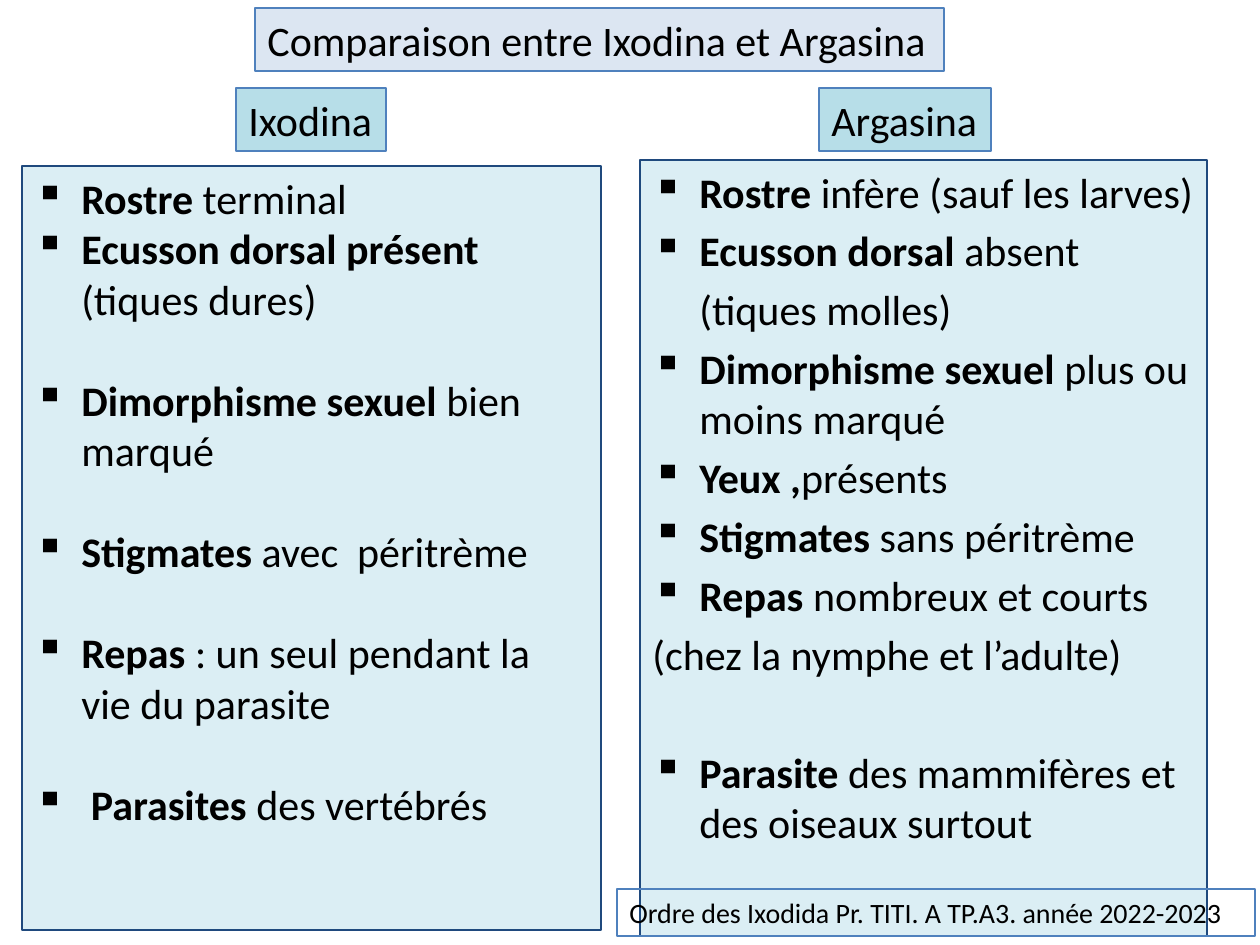
"""Build the slide comparing Ixodina and Argasina ticks."""
from lxml import etree
from pptx import Presentation
from pptx.dml.color import RGBColor
from pptx.enum.shapes import MSO_SHAPE
from pptx.enum.text import MSO_ANCHOR, MSO_AUTO_SIZE, PP_ALIGN
from pptx.oxml.ns import qn
from pptx.util import Emu, Pt

RECTANGLE = MSO_SHAPE.RECTANGLE
TOP = MSO_ANCHOR.TOP
LEFT = PP_ALIGN.LEFT
NO_AUTOSIZE = MSO_AUTO_SIZE.NONE

BLACK = RGBColor(0x00, 0x00, 0x00)
BLUE = RGBColor(0x4F, 0x81, 0xBD)
NAVY = RGBColor(0x1F, 0x49, 0x7D)
LAVENDER = RGBColor(0xDC, 0xE6, 0xF2)
AQUA = RGBColor(0xB7, 0xDE, 0xE8)
PALE_AQUA = RGBColor(0xDB, 0xEE, 0xF4)

FONT = "Calibri"
BODY_SIZE = 24
FOOTER_SIZE = 16
INDENT = 47
BULLET, INDENTED, FLUSH = "bullet", "indented", "flush"

LABELS = [
    ("Ixodina", (236, 88, 150, 63), AQUA, BODY_SIZE),
    ("Argasina", (819, 88, 172, 63), AQUA, BODY_SIZE),
    ("Comparaison entre Ixodina et Argasina", (255, 8, 689, 63), LAVENDER, BODY_SIZE),
]
FOOTER = ("Ordre des Ixodida Pr. TITI. A TP.A3. année 2022-2023",
          (617, 889, 638, 47), None, FOOTER_SIZE)

IXODINA = [
    (BULLET, 0, "Rostre ", "terminal"),
    (BULLET, 0, "Ecusson dorsal présent ", "(tiques dures)"),
    (BULLET, 29, "Dimorphisme sexuel", " bien marqué"),
    (BULLET, 29, "Stigmates", " avec  péritrème"),
    (BULLET, 29, "Repas ", ": un seul pendant la vie du parasite"),
    (BULLET, 29, " Parasites", " des vertébrés"),
]
ARGASINA = [
    (BULLET, 4.8, "Rostre", " infère (sauf les larves)"),
    (BULLET, 4.8, "Ecusson dorsal ", "absent"),
    (INDENTED, 4.8, "", "(tiques molles)"),
    (BULLET, 4.8, "Dimorphisme sexuel ", "plus ou moins marqué"),
    (BULLET, 4.8, "Yeux ,", "présents"),
    (BULLET, 4.8, "Stigmates ", "sans péritrème"),
    (BULLET, 4.8, "Repas", " nombreux et courts"),
    (FLUSH, 4.8, "", "(chez la nymphe et l’adulte)"),
    (BULLET, 38.6, "Parasite ", "des mammifères et des oiseaux surtout"),
]


def px(length):
    """Convert pixels to EMU."""
    return Emu(round(length * 914400 / 126))


def add_box(slide, bounds, fill, line, wrap):
    """Add an outlined rectangle and return its text frame."""
    shape = slide.shapes.add_shape(RECTANGLE, *map(px, bounds))
    shape.shadow.inherit = False
    if fill is None:
        shape.fill.background()
    else:
        shape.fill.solid()
        shape.fill.fore_color.rgb = fill
    shape.line.color.rgb = line
    shape.line.width = Pt(0.75)
    frame = shape.text_frame
    frame.word_wrap = wrap
    frame.auto_size = NO_AUTOSIZE
    frame.vertical_anchor = TOP
    return frame


def add_run(paragraph, text, size=BODY_SIZE, bold=False):
    """Append one formatted run to a paragraph."""
    run = paragraph.add_run()
    run.text = text
    run.font.name = FONT
    run.font.size = Pt(size)
    run.font.bold = bold
    run.font.color.rgb = BLACK


def set_indent(paragraph, kind):
    """Indent a paragraph and hang a square bullet where needed."""
    properties = paragraph._p.get_or_add_pPr()
    if kind != FLUSH:
        properties.set("marL", str(px(INDENT)))
    if kind == BULLET:
        properties.set("indent", str(-px(INDENT)))
        etree.SubElement(properties, qn("a:buChar")).set("char", "▪")


def add_label(slide, text, bounds, fill, size):
    """Add a single-line label."""
    paragraph = add_box(slide, bounds, fill, BLUE, False).paragraphs[0]
    paragraph.alignment = LEFT
    add_run(paragraph, text, size)


def add_panel(slide, bounds, items):
    """Add a panel listing the features of one group."""
    frame = add_box(slide, bounds, PALE_AQUA, NAVY, True)
    for index, (kind, gap, term, detail) in enumerate(items):
        paragraph = frame.add_paragraph() if index else frame.paragraphs[0]
        paragraph.alignment = LEFT
        paragraph.space_before = Pt(gap)
        set_indent(paragraph, kind)
        if term:
            add_run(paragraph, term, bold=True)
        add_run(paragraph, detail)


def main():
    """Build and save the presentation."""
    presentation = Presentation()
    presentation.slide_width = px(1260)
    presentation.slide_height = px(945)
    slide = presentation.slides.add_slide(presentation.slide_layouts[6])
    for label in LABELS:
        add_label(slide, *label)
    add_panel(slide, (22, 166, 579, 764), IXODINA)
    add_panel(slide, (640, 160, 567, 776), ARGASINA)
    add_label(slide, *FOOTER)
    presentation.save("out.pptx")


if __name__ == "__main__":
    main()
